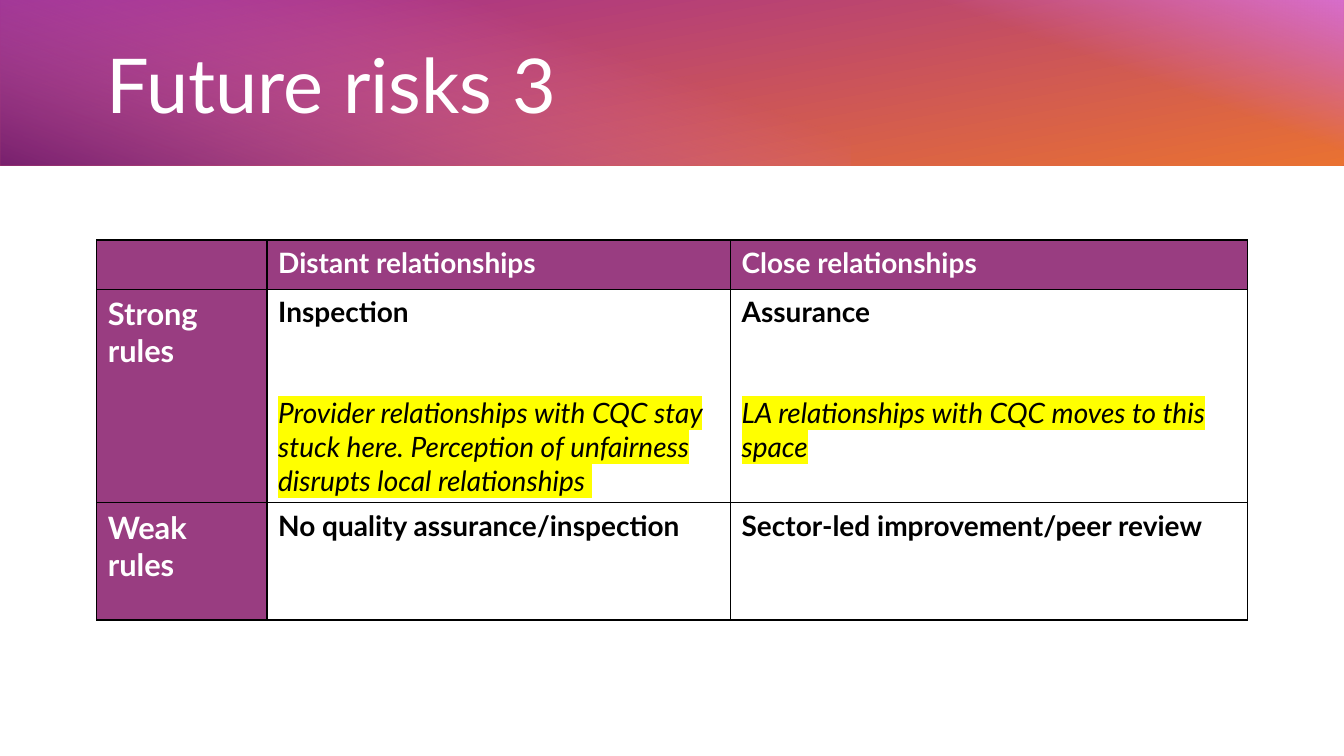
from dataclasses import dataclass
from pptx import Presentation, util as u
from pptx.dml.color import RGBColor
from pptx.enum import shapes, text
from pptx.oxml import parse_xml
from pptx.oxml.ns import nsdecls, qn


@dataclass(frozen=True)
class Theme:
    font: str = "Lato"
    plum: str = "993D81"
    white: str = "FFFFFF"
    black: str = "000000"
    mark: str = "FFFF00"
    violet: str = "A02B93"
    orange: str = "E97132"
    pink: str = "D86ECC"
    dark: str = "78206E"
    title: int = 54
    label: int = 22
    body: int = 20


T = Theme()


def put(obj, vals):
    for key, val in vals.items():
        setattr(obj, key, val)


def write(par, words, size, color, mark=None, **style):
    run = par.add_run()
    run.text = words
    put(run.font, dict(size=u.Pt(size), name=T.font, **style))
    run.font.color.rgb = RGBColor.from_string(color)
    if mark:
        tag = parse_xml(f'<a:highlight {nsdecls("a")}>'
                        f'<a:srgbClr val="{mark}"/></a:highlight>')
        run.font._element.find(qn("a:latin")).addprevious(tag)


def wash(slide, box, turn, stops, angle):
    """Gradient sheet that fills the box once it is turned on its side."""
    x, y, w, h = box
    side = (w - h) / 2
    rect = slide.shapes.add_shape(
        shapes.MSO_SHAPE.RECTANGLE,
        u.Cm(x + side), u.Cm(y - side), u.Cm(h), u.Cm(w))
    rect.rotation = turn
    rect.shadow.inherit = False
    rect.line.fill.background()
    marks = "".join(
        f'<a:gs pos="{pos * 1000}"><a:srgbClr val="{color}">'
        f'<a:alpha val="{alpha * 1000}"/></a:srgbClr></a:gs>'
        for pos, color, alpha in stops)
    grad = parse_xml(
        f'<a:gradFill {nsdecls("a")} rotWithShape="1"><a:gsLst>{marks}</a:gsLst>'
        f'<a:lin ang="{angle * 60000}" scaled="0"/></a:gradFill>')
    rect._element.spPr.find(qn("a:prstGeom")).addnext(grad)


def banner(slide, box, words):
    x, y, w, h = box
    # Colour sheets: base, pink right corner, dark left corner
    wash(slide, box, 270, [(0, T.violet, 100), (100, T.orange, 100)], 170)
    right, left = 14.07, 21.44
    wash(slide, (x + w - right, y, right, h), 270,
         [(59, T.pink, 0), (100, T.pink, 100)], 20)
    wash(slide, (x, y, left, h), 90,
         [(29, T.pink, 0), (100, T.dark, 100)], 20)
    # Title
    head = slide.shapes.add_textbox(
        u.Cm(x + 2.44), u.Cm(y + 0.84), u.Cm(w - 4.76), u.Cm(2.79))
    put(head.text_frame, dict(word_wrap=True,
                              vertical_anchor=text.MSO_ANCHOR.MIDDLE))
    par = head.text_frame.paragraphs[0]
    par.line_spacing = 0.9
    write(par, words, T.title, T.white)


def frame(cell, fill):
    props = cell._tc.get_or_add_tcPr()
    for side in "LRTB":
        props.append(parse_xml(
            f'<a:ln{side} {nsdecls("a")} w="12700"><a:solidFill>'
            f'<a:srgbClr val="{T.black}"/></a:solidFill></a:ln{side}>'))
    cell.fill.solid()
    cell.fill.fore_color.rgb = RGBColor.from_string(fill)
    put(cell, dict(margin_left=u.Cm(0.28), margin_right=u.Cm(0.28),
                   margin_top=u.Cm(0.15), margin_bottom=u.Cm(0.15)))


def matrix(slide, box, cols, rows, data):
    """Each entry holds a heading and, if any, a highlighted remark."""
    grid = slide.shapes.add_table(
        len(rows), len(cols), *(u.Cm(v) for v in box)).table
    for col, width in zip(grid.columns, cols):
        col.width = u.Cm(width)
    for row, height in zip(grid.rows, rows):
        row.height = u.Cm(height)
    for r, line in enumerate(data):
        for c, (name, *notes) in enumerate(line):
            cell = grid.cell(r, c)
            edge = r == 0 or c == 0
            frame(cell, T.plum if edge else T.white)
            if name:
                write(cell.text_frame.paragraphs[0], name,
                      T.body if c else T.label,
                      T.white if edge else T.black, bold=True)
            for note in notes:
                par = cell.text_frame.add_paragraph()
                par.space_before = u.Pt(48)
                write(par, note, T.body, T.black, T.mark,
                      bold=False, italic=True)


RISKS = [
    [("",), ("Distant relationships",), ("Close relationships",)],
    [("Strong rules",),
     ("Inspection", "Provider relationships with CQC stay stuck here. "
      "Perception of unfairness disrupts local relationships "),
     ("Assurance", "LA relationships with CQC moves to this space")],
    [("Weak rules",), ("No quality assurance/inspection",),
     ("Sector-led improvement/peer review",)],
]


def main():
    deck = Presentation()
    put(deck, dict(slide_width=u.Cm(33.87), slide_height=u.Cm(19.05)))
    slide = deck.slides.add_slide(deck.slide_layouts[6])
    banner(slide, (0, 0, 33.87, 4.16), "Future risks 3")
    cols, rows = (4.29, 11.68, 13.03), (1.24, 5.37, 2.95)
    matrix(slide, (2.44, 6.05, sum(cols), sum(rows)), cols, rows, RISKS)
    deck.save("out.pptx")


if __name__ == "__main__":
    main()
